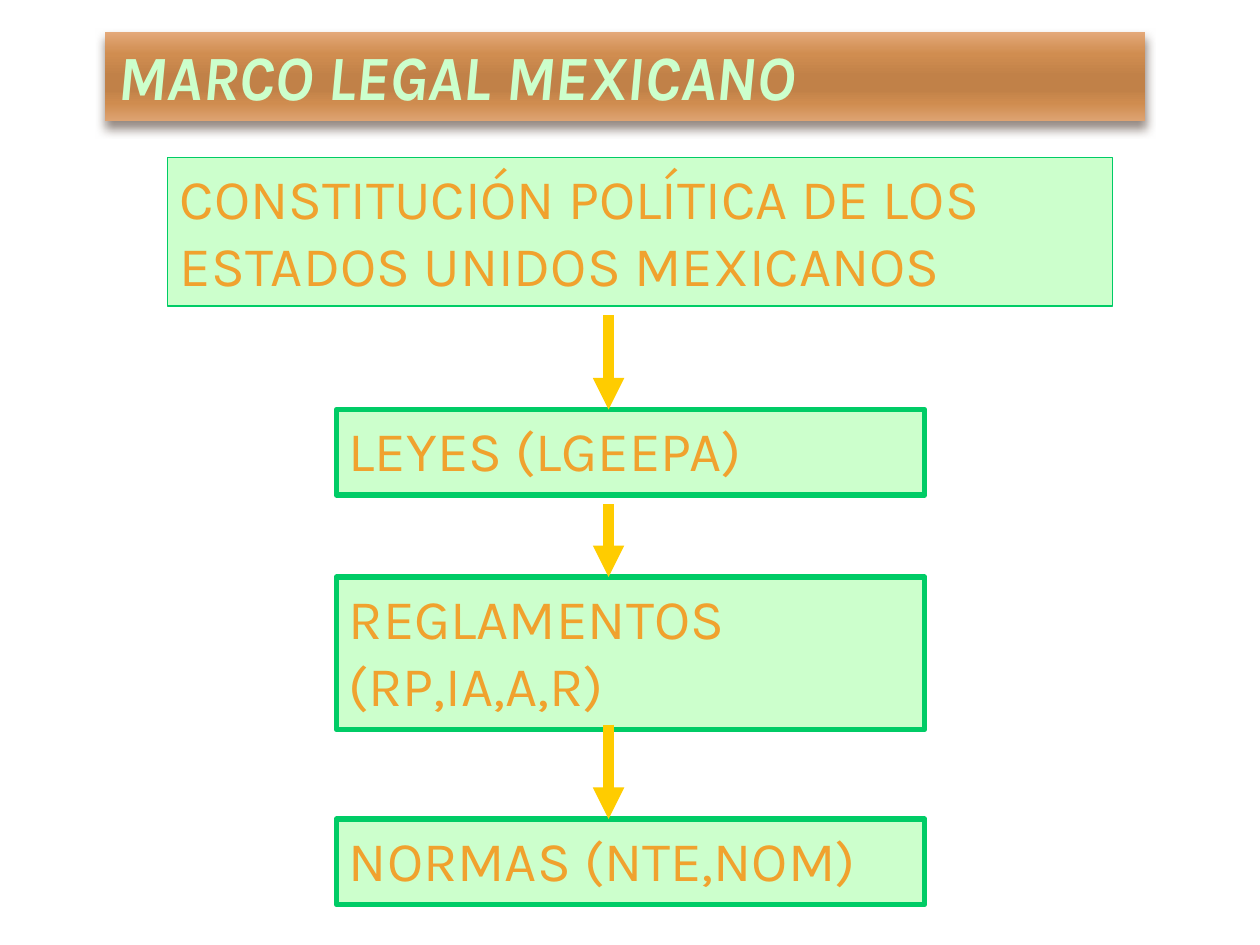
import pptx
import pptx.util
import pptx.dml.color
import pptx.enum.shapes
import pptx.enum.text
import pptx.oxml
import pptx.oxml.ns
from lxml import etree

Inches = pptx.util.Inches
Pt = pptx.util.Pt
RGBColor = pptx.dml.color.RGBColor
qn = pptx.oxml.ns.qn

FONT = "Karla"
MINT = RGBColor(0xCC, 0xFF, 0xCC)
GREEN = RGBColor(0x00, 0xCC, 0x66)
ORANGE = RGBColor(0xF0, 0xA2, 0x2E)
YELLOW = RGBColor(0xFF, 0xCC, 0x00)
SHADOW = RGBColor(0x4E, 0x3B, 0x30)
BRONZE_STOPS = [
    (0, RGBColor(0xE4, 0xA9, 0x7A)),
    (25, RGBColor(0xD0, 0x8D, 0x50)),
    (50, RGBColor(0xC1, 0x81, 0x48)),
    (65, RGBColor(0xC1, 0x81, 0x48)),
    (80, RGBColor(0xCF, 0x8C, 0x4F)),
    (100, RGBColor(0xDE, 0xA3, 0x72)),
]

# Text, left, top, width, height, border width
LEVELS = [
    ("CONSTITUCIÓN POLÍTICA DE LOS ESTADOS UNIDOS MEXICANOS",
     1.33, 1.25, 7.5, 1.18, 0.75),
    ("LEYES (LGEEPA)", 2.67, 3.25, 4.67, 0.68, 3),
    ("REGLAMENTOS (RP,IA,A,R)", 2.67, 4.58, 4.67, 1.21, 3),
    ("NORMAS (NTE,NOM)", 2.67, 6.5, 4.67, 0.68, 3),
]
ARROW_X = 4.83
ARROW_SPANS = [(2.5, 3.25), (4, 4.58), (5.75, 6.5)]


def write_text(sp, text, size=32, color=ORANGE, bold=False, italic=False):
    tf = sp.text_frame
    tf.word_wrap = True
    tf.auto_size = pptx.enum.text.MSO_AUTO_SIZE.NONE
    tf.vertical_anchor = pptx.enum.text.MSO_ANCHOR.TOP
    p = tf.paragraphs[0]
    p.alignment = pptx.enum.text.PP_ALIGN.LEFT
    r = p.add_run()
    r.text = text
    r.font.name = FONT
    r.font.size = Pt(size)
    r.font.color.rgb = color
    r.font.bold = bold
    r.font.italic = italic


def add_bronze_style(sp):
    """Vertical gradient fill and a soft shadow below."""
    stops = "".join(
        f'<a:gs pos="{pos * 1000}"><a:srgbClr val="{color}"/></a:gs>'
        for pos, color in BRONZE_STOPS)
    ns = pptx.oxml.ns.nsdecls("a")
    sp_pr = sp.element.spPr
    sp_pr.append(pptx.oxml.parse_xml(
        f'<a:gradFill {ns} rotWithShape="1"><a:gsLst>{stops}</a:gsLst>'
        '<a:lin ang="5400000" scaled="0"/></a:gradFill>'))
    sp_pr.append(pptx.oxml.parse_xml(
        f'<a:effectLst {ns}><a:outerShdw blurRad="{Pt(6)}" dist="{Pt(4)}" '
        f'dir="5400000" rotWithShape="0"><a:srgbClr val="{SHADOW}">'
        '<a:alpha val="60000"/></a:srgbClr></a:outerShdw></a:effectLst>'))


def format_title(s, text):
    sp = s.shapes.title
    sp.left, sp.top = Inches(0.83), Inches(0.25)
    sp.width, sp.height = Inches(8.26), Inches(0.71)
    add_bronze_style(sp)
    write_text(sp, text, size=36, color=MINT, bold=True, italic=True)


def add_level(s, text, left, top, width, height, border):
    sp = s.shapes.add_shape(
        pptx.enum.shapes.MSO_SHAPE.RECTANGLE,
        Inches(left), Inches(top), Inches(width), Inches(height))
    sp.shadow.inherit = False
    sp.fill.solid()
    sp.fill.fore_color.rgb = MINT
    sp.line.color.rgb = GREEN
    sp.line.width = Pt(border)
    write_text(sp, text)


def add_down_arrow(s, x, top, bottom):
    cxn = s.shapes.add_connector(
        pptx.enum.shapes.MSO_CONNECTOR.STRAIGHT,
        Inches(x), Inches(top), Inches(x), Inches(bottom))
    cxn.line.color.rgb = YELLOW
    cxn.line.width = Pt(6)
    etree.SubElement(cxn.line._get_or_add_ln(), qn("a:tailEnd"), type="triangle")
    etree.SubElement(cxn.element.spPr, qn("a:effectLst"))


def main():
    prs = pptx.Presentation()
    prs.slide_width, prs.slide_height = Inches(10), Inches(7.5)
    s = prs.slides.add_slide(prs.slide_layouts[5])

    # Heading band
    format_title(s, "MARCO LEGAL MEXICANO")

    # Legal hierarchy, highest level first
    for level in LEVELS:
        add_level(s, *level)

    # Arrows between levels
    for top, bottom in ARROW_SPANS:
        add_down_arrow(s, ARROW_X, top, bottom)

    prs.save("out.pptx")


if __name__ == "__main__":
    main()
